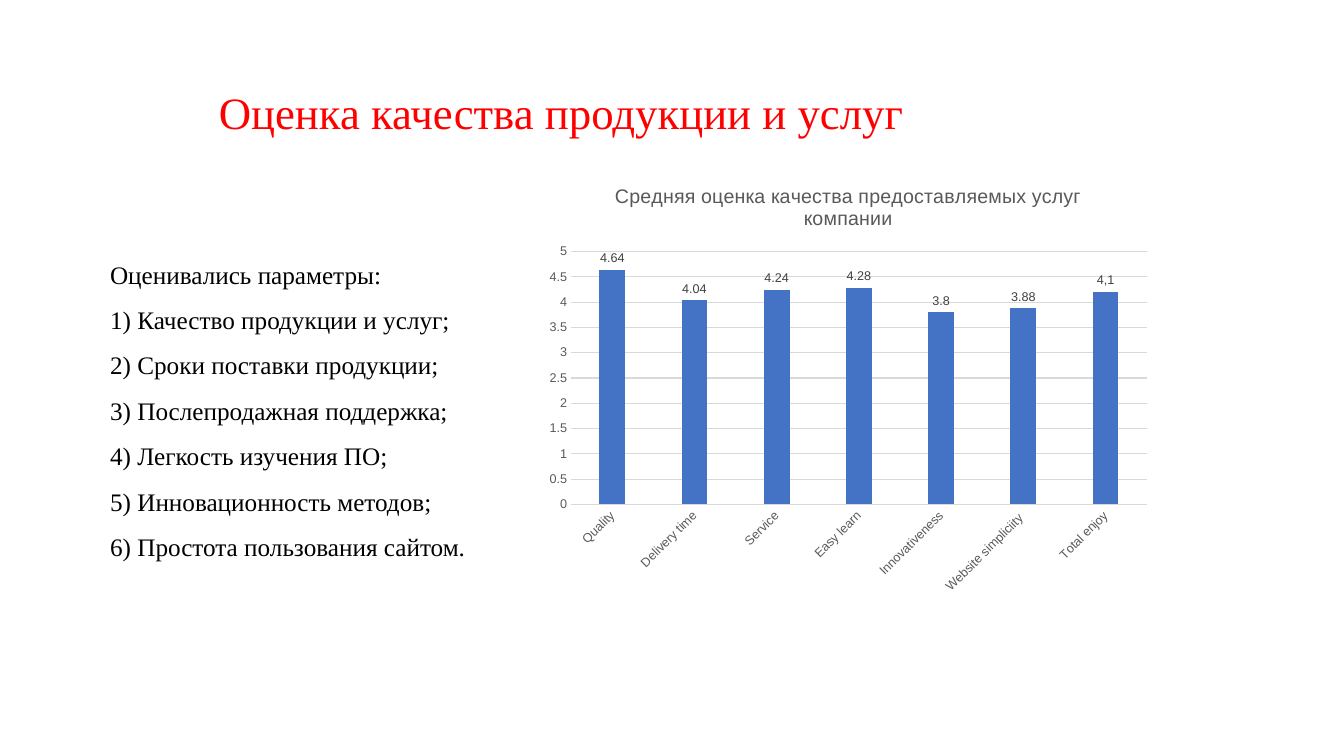
from pptx import Presentation
from pptx.chart.data import CategoryChartData
from pptx.dml.color import RGBColor
from pptx.enum.chart import XL_CHART_TYPE as ChartType, XL_LABEL_POSITION as LabelPosition
from pptx.enum.chart import XL_TICK_MARK as TickMark
from pptx.enum.text import MSO_ANCHOR, MSO_AUTO_SIZE, PP_ALIGN
from pptx.oxml.ns import qn
from pptx.util import Cm, Pt

PARAMETERS = [
    "Оценивались параметры:",
    "1) Качество продукции и услуг;",
    "2) Сроки поставки продукции;",
    "3) Послепродажная поддержка;",
    "4) Легкость изучения ПО;",
    "5) Инновационность методов;",
    "6) Простота пользования сайтом.",
]
SCORES = {
    "Quality": 4.64,
    "Delivery time": 4.04,
    "Service": 4.24,
    "Easy learn": 4.28,
    "Innovativeness": 3.8,
    "Website simpliciity ": 3.88,
    "Total enjoy": 4.2,
}


def color(hex_string):
    return RGBColor.from_string(hex_string)


def set_font(font, name, size, hex_string):
    font.name = name
    font.size = Pt(size)
    font.bold = False
    font.color.rgb = color(hex_string)


class SurveySlide:
    TEXT_FONT = "Times New Roman"
    CHART_FONT = "Arial"
    TITLE_COLOR, TEXT_COLOR = "FF0000", "000000"
    BAR_COLOR, GRID_COLOR = "4472C4", "D9D9D9"
    AXIS_COLOR, LABEL_COLOR = "595959", "404040"

    def __init__(self, presentation):
        self.slide = presentation.slides.add_slide(presentation.slide_layouts[1])

    def fill_placeholder(self, index, lines, box, size, hex_string, line_spacing):
        """Move a template placeholder to box and fill it with indented lines."""
        shape = self.slide.placeholders[index]
        shape.left, shape.top, shape.width, shape.height = map(Cm, box)
        frame = shape.text_frame
        frame.text = "\n".join(lines)
        frame.word_wrap = True
        frame.auto_size = MSO_AUTO_SIZE.SHAPE_TO_FIT_TEXT
        frame.vertical_anchor = MSO_ANCHOR.TOP
        for paragraph in frame.paragraphs:
            paragraph.alignment = PP_ALIGN.JUSTIFY
            paragraph.line_spacing = line_spacing
            paragraph.space_before = paragraph.space_after = Pt(0)
            set_font(paragraph.font, self.TEXT_FONT, size, hex_string)
            properties = paragraph._p.get_or_add_pPr()
            properties.set("marL", str(Cm(1.27)))
            properties.set("indent", str(Cm(1.25)))
            bullet = properties.makeelement(qn("a:buNone"), {})
            properties.insert_element_before(bullet, "a:tabLst", "a:defRPr", "a:extLst")

    def title(self, text):
        self.fill_placeholder(0, [text], (2.74, 2.01, 24, 1.63), 32, self.TITLE_COLOR, 1)

    def body(self, lines):
        self.fill_placeholder(1, lines, (0, 6.02, 13.13, 8.2), 18, self.TEXT_COLOR, 1.5)

    def column_chart(self, title, scores, box):
        data = CategoryChartData()
        data.categories = list(scores)
        data.add_series("Series 1", list(scores.values()))
        chart = self.slide.shapes.add_chart(
            ChartType.COLUMN_CLUSTERED, *map(Cm, box), data).chart
        set_font(chart.font, self.CHART_FONT, 10, self.TEXT_COLOR)
        chart.has_legend = False
        chart.has_title = True
        chart.chart_title.include_in_layout = False
        chart.chart_title.text_frame.text = title
        set_font(chart.chart_title.text_frame.paragraphs[0].font,
                 self.CHART_FONT, 14, self.AXIS_COLOR)
        self.style_axes(chart)
        self.style_columns(chart.plots[0])

    def style_axes(self, chart):
        category_axis, value_axis = chart.category_axis, chart.value_axis
        for axis in (category_axis, value_axis):
            axis.major_tick_mark = axis.minor_tick_mark = TickMark.NONE
            set_font(axis.tick_labels.font, self.CHART_FONT, 9, self.AXIS_COLOR)
        category_labels = category_axis._element.find(qn("c:txPr")).find(qn("a:bodyPr"))
        category_labels.set("rot", "-2700000")
        value_axis.minimum_scale, value_axis.maximum_scale = 0, 5
        value_axis.major_unit = 0.5
        value_axis.has_major_gridlines = True
        value_axis.format.line.fill.background()
        for line in (category_axis.format.line, value_axis.major_gridlines.format.line):
            line.color.rgb = color(self.GRID_COLOR)
            line.width = Pt(0.75)

    def style_columns(self, plot):
        plot.gap_width, plot.overlap = 219, -27
        plot.vary_by_categories = False
        series = plot.series[0]
        series.format.fill.solid()
        series.format.fill.fore_color.rgb = color(self.BAR_COLOR)
        labels = series.data_labels
        labels.show_value = True
        labels.position = LabelPosition.OUTSIDE_END
        set_font(labels.font, self.CHART_FONT, 9, self.LABEL_COLOR)
        total_label = series.points[len(series.values) - 1].data_label
        total_label.text_frame.text = "4,1"
        total_label.position = LabelPosition.OUTSIDE_END
        set_font(total_label.text_frame.paragraphs[0].runs[0].font,
                 self.CHART_FONT, 9, self.LABEL_COLOR)


def main():
    presentation = Presentation()
    presentation.slide_width, presentation.slide_height = Cm(33.87), Cm(19.05)
    survey = SurveySlide(presentation)
    survey.title("Оценка качества продукции и услуг")
    survey.body(PARAMETERS)
    survey.column_chart("Средняя оценка качества предоставляемых услуг компании",
                        SCORES, (13.54, 4.17, 15.67, 11.02))
    presentation.save("out.pptx")


if __name__ == "__main__":
    main()
